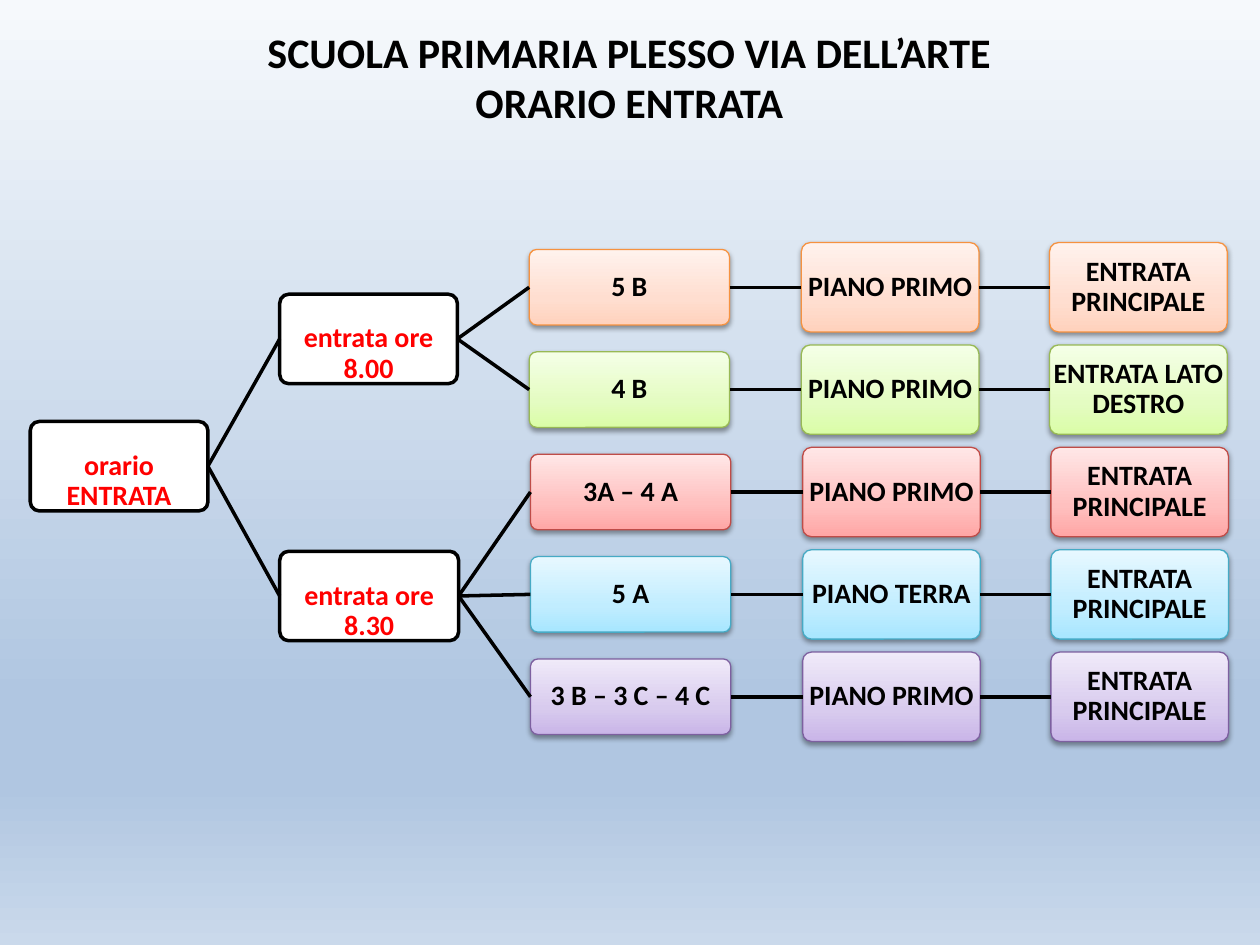
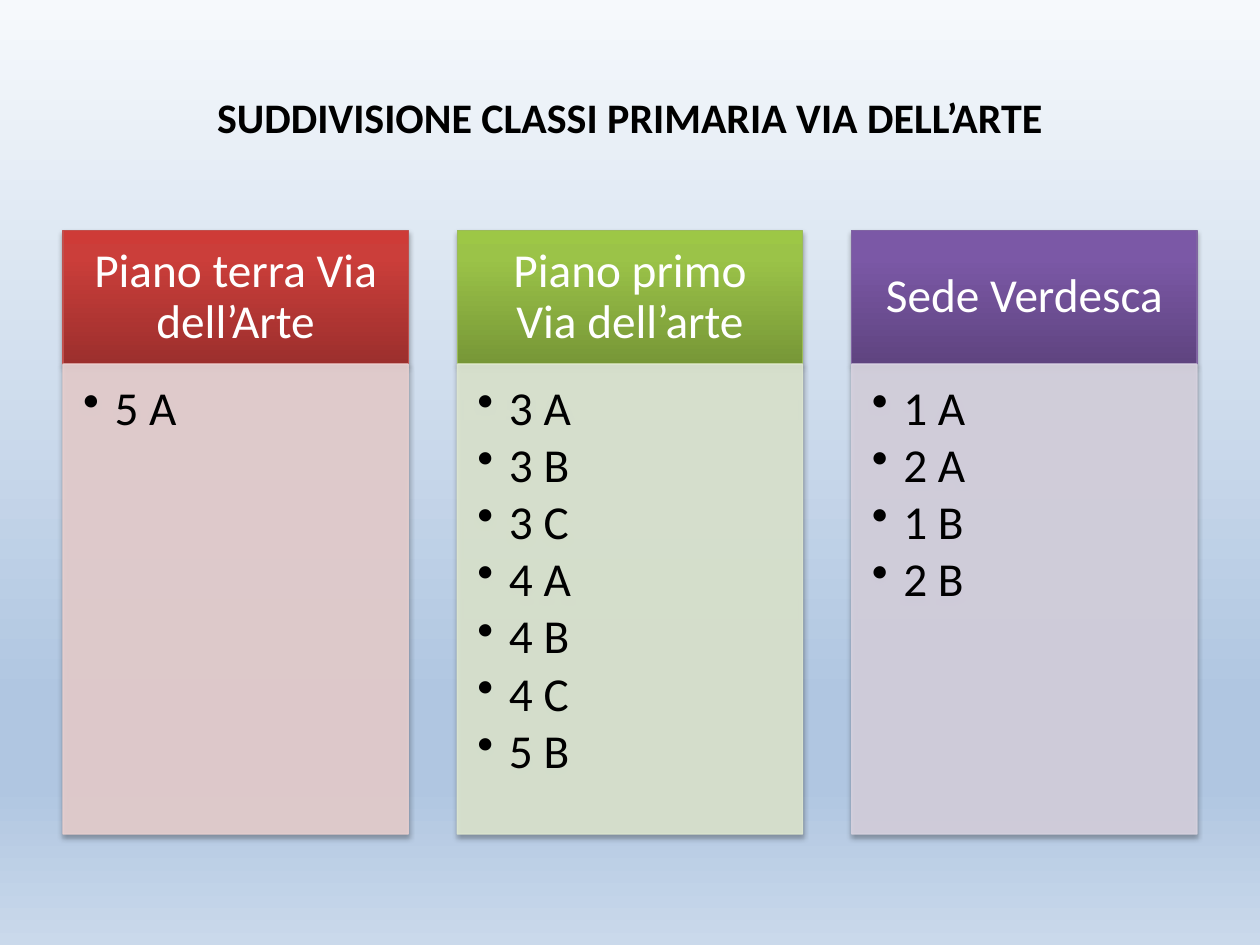
from lxml import etree
from pptx import Presentation
from pptx.dml.color import RGBColor
from pptx.enum.shapes import MSO_CONNECTOR, MSO_SHAPE
from pptx.enum.text import MSO_ANCHOR as ANCHOR, MSO_AUTO_SIZE, PP_ALIGN as ALIGN
from pptx.oxml.ns import qn
from pptx.util import Inches, Pt

FONT = "Calibri"
BLACK = RGBColor(0x00, 0x00, 0x00)
WHITE = RGBColor(0xFF, 0xFF, 0xFF)
RED = RGBColor(0xFF, 0x00, 0x00)


def stops(*pairs):
    """Gradient stops from (percent, hex colour) pairs."""
    return [(pos, RGBColor.from_string(color)) for pos, color in pairs]


BACKGROUND = stops((0, "F6F9FC"), (74, "B0C6E1"), (83, "B0C6E1"), (100, "CAD9EB"))

# Pale gradients with their outline, for the rows of the tree
ORANGE = stops((0, "FFD2BD"), (35, "FFDED0"), (100, "FFF2ED")), RGBColor(0xF6, 0x92, 0x40)
GREEN = stops((0, "DAFDA7"), (35, "E4FCC2"), (100, "F5FFE7")), RGBColor(0x98, 0xB9, 0x55)
ROSE = stops((0, "FFA6A5"), (35, "FFC0BF"), (100, "FFE7E7")), RGBColor(0xBF, 0x4C, 0x48)
AQUA = stops((0, "A7E6FF"), (35, "C1EDFF"), (100, "E7F8FF")), RGBColor(0x46, 0xAA, 0xC5)
VIOLET = stops((0, "C9B5E8"), (35, "D8CBEE"), (100, "F0EAF9")), RGBColor(0x7D, 0x60, 0xA0)

# Strong gradients with their outline, for the column headers
DEEP_RED = stops((0, "9C2F2D"), (80, "CB3E3A"), (100, "CE3B37")), RGBColor(0xC0, 0x50, 0x4D)
DEEP_GREEN = stops((0, "779737"), (80, "9BC348"), (100, "9DC746")), RGBColor(0x9B, 0xBB, 0x59)
DEEP_VIOLET = stops((0, "5F4480"), (80, "7B58A6"), (100, "7C57A8")), RGBColor(0x80, 0x64, 0xA2)
PALE_RED = RGBColor(0xE8, 0xD0, 0xD0)
PALE_GREEN = RGBColor(0xDE, 0xE7, 0xD1)
PALE_VIOLET = RGBColor(0xD8, 0xD3, 0xE0)


def paint_gradient(fill, element, gradient, angle):
    fill.gradient()
    fill.gradient_angle = angle
    gs_list = element.find(".//" + qn("a:gsLst"))
    for gs in list(gs_list):
        gs_list.remove(gs)
    for pos, color in gradient:
        gs = etree.SubElement(gs_list, qn("a:gs"), pos=str(pos * 1000))
        etree.SubElement(gs, qn("a:srgbClr"), val=str(color))


class Deck:
    def __init__(self):
        self.prs = Presentation()
        self.prs.slide_width, self.prs.slide_height = Inches(10), Inches(7.5)
        master = self.prs.slide_master
        paint_gradient(master.background.fill, master.element, BACKGROUND, 270)
        self.s = None

    def slide(self, title, box, anchor):
        self.s = self.prs.slides.add_slide(self.prs.slide_layouts[5])
        sp = self.s.shapes.title
        sp.left, sp.top, sp.width, sp.height = map(Inches, box)
        self.text(sp, title, 24, BLACK, bold=True, anchor=anchor)

    def text(self, sp, text, size, color, bold=False, anchor=ANCHOR.MIDDLE,
             insets=(0.1, 0.05, 0.1, 0.05), spacing=1.0, align=ALIGN.CENTER):
        tf = sp.text_frame
        tf.text = text
        tf.word_wrap = True
        tf.auto_size = MSO_AUTO_SIZE.NONE
        tf.vertical_anchor = anchor
        tf.margin_left, tf.margin_top, tf.margin_right, tf.margin_bottom = map(Inches, insets)
        for p in tf.paragraphs:
            p.alignment = align
            p.line_spacing = spacing
            for r in p.runs:
                font = r.font
                font.name, font.size, font.bold = FONT, Pt(size), bold
                font.color.rgb = color

    def box(self, shape, x, y, w, h, fill, line, width=0.75, opacity=100):
        """Shape with a gradient (list of stops) or a plain colour."""
        sp = self.s.shapes.add_shape(shape, *map(Inches, (x, y, w, h)))
        if isinstance(fill, list):
            paint_gradient(sp.fill, sp.element, fill, 90)
        else:
            sp.fill.solid()
            sp.fill.fore_color.rgb = fill
        sp.line.color.rgb = line
        sp.line.width = Pt(width)
        if opacity < 100:
            for clr in sp.element.spPr.iter(qn("a:srgbClr")):
                etree.SubElement(clr, qn("a:alpha"), val=str(opacity * 1000))
        sp.shadow.inherit = False
        return sp

    def shadow(self, sp, opacity, distance):
        effects = sp.element.spPr.find(qn("a:effectLst"))
        outer = etree.SubElement(effects, qn("a:outerShdw"), blurRad=str(Pt(3.1)),
                                 dist=str(Pt(distance)), dir="5400000", rotWithShape="0")
        clr = etree.SubElement(outer, qn("a:srgbClr"), val=str(BLACK))
        etree.SubElement(clr, qn("a:alpha"), val=str(opacity * 1000))

    def node(self, text, x, middle, w=1.41, h=0.71, scheme=None):
        """Rounded box of the tree; without a scheme it is white with red text."""
        fill, line = scheme or (WHITE, BLACK)
        sp = self.box(MSO_SHAPE.ROUNDED_RECTANGLE, x, middle - h / 2, w, h,
                      fill, line, 0.75 if scheme else 2)
        sp.adjustments[0] = 0.1
        if scheme:
            self.shadow(sp, 38, 1.6)
        self.text(sp, text, 16, BLACK if scheme else RED, bold=True, spacing=0.9,
                  insets=(0, 0 if scheme else 0.24, 0, 0))
        return sp

    def link(self, start, end):
        c = self.s.shapes.add_connector(MSO_CONNECTOR.STRAIGHT, 0, 0, 0, 0)
        c.begin_connect(start, 3)
        c.end_connect(end, 1)
        c.line.color.rgb = BLACK
        c.line.width = Pt(2)
        etree.SubElement(c.element.spPr, qn("a:effectLst"))

    def column(self, x, w, header, scheme, classes, pale):
        top, header_h, body_h = 1.83, 1.06, 3.73
        head = self.box(MSO_SHAPE.RECTANGLE, x, top, w, header_h, *scheme)
        self.text(head, header, 27, WHITE, spacing=0.9, insets=(0.21, 0.12, 0.21, 0.12))
        body = self.box(MSO_SHAPE.RECTANGLE, x, top + header_h, w, body_h,
                        pale, pale, opacity=90)
        self.text(body, "\n".join(classes), 27, BLACK, spacing=0.9, anchor=ANCHOR.TOP,
                  insets=(0.16, 0.16, 0.21, 0.24), align=ALIGN.LEFT)
        for p in body.text_frame.paragraphs:
            p.space_after = Pt(3.5)
            pPr = p._p.get_or_add_pPr()
            pPr.set("marL", str(Inches(0.25)))
            pPr.set("indent", str(-Inches(0.25)))
            etree.SubElement(pPr, qn("a:buChar"), char="•")
        for sp in (head, body):
            self.shadow(sp, 35, 1.8)


def entry_tree(deck):
    deck.slide("SCUOLA PRIMARIA PLESSO VIA DELL’ARTE\nORARIO ENTRATA",
               (0.43, 0.16, 9.13, 0.91), ANCHOR.TOP)
    main_door, right_door = "ENTRATA PRINCIPALE", "ENTRATA LATO DESTRO"
    first, ground = "PIANO PRIMO", "PIANO TERRA"
    # Entry time, middle, shift to the right, rows of class, floor, door, colours
    entries = [
        ("entrata ore 8.00", 2.69, 0, [
            ("5 B", first, main_door, ORANGE),
            ("4 B", first, right_door, GREEN)]),
        ("entrata ore 8.30", 4.73, 0.01, [
            ("3A – 4 A", first, main_door, ROSE),
            ("5 A", ground, main_door, AQUA),
            ("3 B – 3 C – 4 C", first, main_door, VIOLET)]),
    ]
    root = deck.node("orario ENTRATA", 0.24, 3.7)
    row_middle, row_pitch = 2.28, 3.25 / 4
    for time, middle, shift, rows in entries:
        entry = deck.node(time, 2.22, middle, w=1.41 + shift)
        deck.link(root, entry)
        for classes, floor, door, scheme in rows:
            chain = [
                entry,
                deck.node(classes, 4.2 + shift, row_middle, 1.59, 0.6, scheme),
                deck.node(floor, 6.36 + shift, row_middle, scheme=scheme),
                deck.node(door, 8.33 + shift, row_middle, scheme=scheme),
            ]
            for start, end in zip(chain, chain[1:]):
                deck.link(start, end)
            row_middle += row_pitch


def class_columns(deck):
    deck.slide("SUDDIVISIONE CLASSI PRIMARIA VIA DELL’ARTE",
               (0.5, 0.3, 9, 1.25), ANCHOR.MIDDLE)
    columns = [
        ("Piano terra Via dell’Arte", DEEP_RED, ["5 A"], PALE_RED),
        ("Piano primo Via dell’arte", DEEP_GREEN,
         ["3 A", "3 B", "3 C", "4 A", "4 B", "4 C", "5 B"], PALE_GREEN),
        ("Sede Verdesca", DEEP_VIOLET, ["1 A", "2 A", "1 B", "2 B"], PALE_VIOLET),
    ]
    left, total, w = 0.5, 9, 2.74
    pitch = (total - w) / (len(columns) - 1)
    for i, column in enumerate(columns):
        deck.column(left + i * pitch, w, *column)


def main():
    deck = Deck()
    entry_tree(deck)
    class_columns(deck)
    deck.prs.save("out.pptx")


if __name__ == "__main__":
    main()
